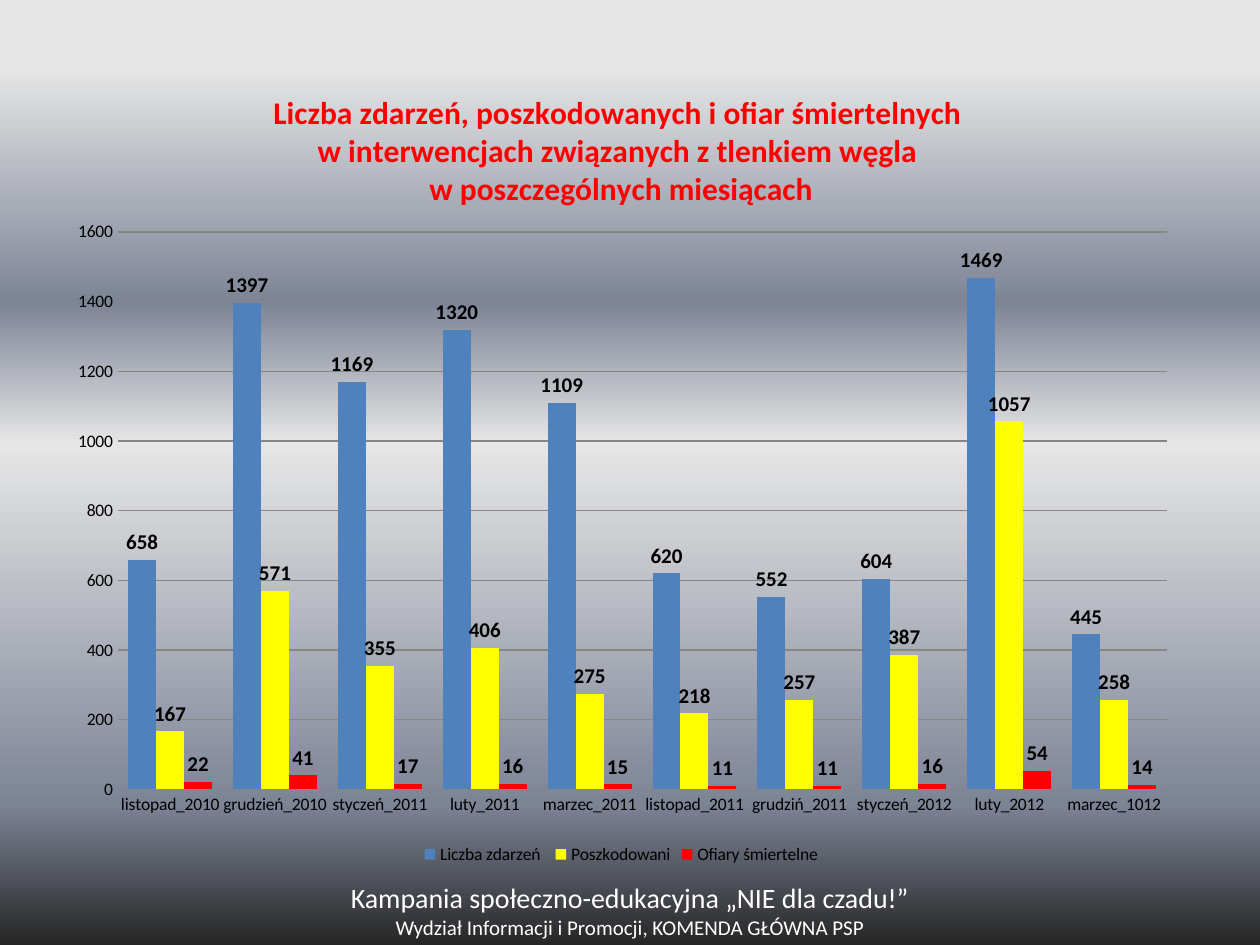
from dataclasses import dataclass

from lxml.etree import SubElement
from pptx import Presentation
from pptx.chart.data import CategoryChartData
from pptx.dml.color import RGBColor
from pptx.enum.chart import (XL_CHART_TYPE, XL_LABEL_POSITION,
                             XL_LEGEND_POSITION, XL_TICK_MARK)
from pptx.enum.text import MSO_ANCHOR, PP_ALIGN
from pptx.oxml import parse_xml
from pptx.oxml.ns import nsdecls, qn
from pptx.util import Inches, Pt


@dataclass(frozen=True)
class Theme:
    font: str = "Calibri"
    text: str = "000000"
    light: str = "FFFFFF"
    title: str = "FF0000"
    grid: str = "868686"
    series: tuple = ("4F81BD", "FFFF00", "FF0000")
    background: tuple = ((7, "E6E6E6"), (32, "7D8496"), (47, "E6E6E6"),
                         (85, "7D8496"), (100, "262626"))
    title_size: int = 18
    campaign_size: int = 16
    body_size: int = 12
    axis_size: int = 10


THEME = Theme()

TITLE = ("Liczba zdarzeń, poszkodowanych i ofiar śmiertelnych ",
         "w interwencjach związanych z tlenkiem węgla ",
         "w poszczególnych miesiącach")
FOOTER = (("Kampania społeczno-edukacyjna „NIE dla czadu!”", THEME.campaign_size),
          ("Wydział Informacji i Promocji, KOMENDA GŁÓWNA PSP", THEME.body_size))
MONTHS = ("listopad_2010", "grudzień_2010", "styczeń_2011", "luty_2011",
          "marzec_2011", "listopad_2011", "grudziń_2011", "styczeń_2012",
          "luty_2012", "marzec_1012")
COUNTS = {
    "Liczba zdarzeń ": (658, 1397, 1169, 1320, 1109, 620, 552, 604, 1469, 445),
    "Poszkodowani": (167, 571, 355, 406, 275, 218, 257, 387, 1057, 258),
    "Ofiary śmiertelne": (22, 41, 17, 16, 15, 11, 11, 16, 54, 14),
}


def apply(obj, **values):
    for name, value in values.items():
        setattr(obj, name, value)


def format_font(font, size, color=THEME.text, bold=False):
    apply(font, name=THEME.font, size=Pt(size), bold=bold)
    font.color.rgb = RGBColor.from_string(color)


def format_line(line, color=THEME.grid):
    line.color.rgb = RGBColor.from_string(color)
    line.width = Pt(0.75)


def fill_paragraph(p, text, size, color, bold=False):
    p.alignment = PP_ALIGN.CENTER
    r = p.add_run()
    r.text = text
    format_font(r.font, size, color, bold)


def paragraphs(tf, count):
    """Return count paragraphs, the first being the one already there."""
    return [tf.paragraphs[0]] + [tf.add_paragraph() for _ in range(count - 1)]


def set_background(s):
    fill = s.background.fill
    fill.gradient()
    fill.gradient_angle = 270
    stops = s._element.find(".//" + qn("a:gsLst"))
    for stop in list(stops):
        stops.remove(stop)
    for percent, color in THEME.background:
        stop = SubElement(stops, qn("a:gs"), pos=str(percent * 1000))
        SubElement(stop, qn("a:srgbClr"), val=color)


def set_layout(element, index, inner=False, **fractions):
    """Place a chart part by fractions of the chart's size."""
    old = element.find(qn("c:layout"))
    if old is not None:
        element.remove(old)
    layout = parse_xml(f"<c:layout {nsdecls('c')}><c:manualLayout/></c:layout>")
    manual = layout[0]
    if inner:
        SubElement(manual, qn("c:layoutTarget"), val="inner")
    for side in "xy":
        SubElement(manual, qn(f"c:{side}Mode"), val="edge")
    for side, value in fractions.items():
        SubElement(manual, qn(f"c:{side}"), val=str(value))
    element.insert(index, layout)


def add_chart_title(chart):
    chart.has_title = True
    title = chart.chart_title
    for p, text in zip(paragraphs(title.text_frame, len(TITLE)), TITLE):
        fill_paragraph(p, text, THEME.title_size, THEME.title, True)
    set_layout(title._element, 1, x=0.19, y=0.04)


def format_axes(chart):
    for axis in (chart.category_axis, chart.value_axis):
        apply(axis, major_tick_mark=XL_TICK_MARK.NONE,
              minor_tick_mark=XL_TICK_MARK.NONE)
        format_font(axis.tick_labels.font, THEME.axis_size)
    format_line(chart.category_axis.format.line)
    apply(chart.value_axis, minimum_scale=0, maximum_scale=1600,
          major_unit=200, has_major_gridlines=True)
    chart.value_axis.format.line.fill.background()
    format_line(chart.value_axis.major_gridlines.format.line)


def format_series(series, color):
    series.invert_if_negative = False
    series.format.fill.solid()
    series.format.fill.fore_color.rgb = RGBColor.from_string(color)
    labels = series.data_labels
    apply(labels, show_value=True, position=XL_LABEL_POSITION.OUTSIDE_END)
    format_font(labels.font, THEME.body_size, bold=True)


def add_monthly_chart(s):
    data = CategoryChartData()
    data.categories = MONTHS
    for name, values in COUNTS.items():
        data.add_series(name, values)
    chart = s.shapes.add_chart(
        XL_CHART_TYPE.COLUMN_CLUSTERED, Inches(0.43), Inches(0.44),
        Inches(9), Inches(6.46), data).chart
    format_font(chart.font, THEME.axis_size)
    add_chart_title(chart)
    format_axes(chart)

    # Columns
    plot = chart.plots[0]
    apply(plot, gap_width=75, overlap=0, vary_by_categories=False)
    for series, color in zip(plot.series, THEME.series):
        format_series(series, color)
    plot_area = chart._chartSpace.find(".//" + qn("c:plotArea"))
    set_layout(plot_area, 0, inner=True, x=0.056, y=0.217, w=0.925, h=0.685)

    # Legend
    chart.has_legend = True
    apply(chart.legend, position=XL_LEGEND_POSITION.BOTTOM,
          include_in_layout=False)
    format_font(chart.legend.font, THEME.axis_size)


def add_footer(s):
    tf = s.shapes.add_textbox(Inches(2.01), Inches(7.1),
                              Inches(5.98), Inches(0.4)).text_frame
    apply(tf, word_wrap=True, vertical_anchor=MSO_ANCHOR.MIDDLE,
          margin_top=Inches(0.05), margin_bottom=Inches(0.2))
    for p, (text, size) in zip(paragraphs(tf, len(FOOTER)), FOOTER):
        fill_paragraph(p, text, size, THEME.light)


def main():
    prs = Presentation()
    apply(prs, slide_width=Inches(10), slide_height=Inches(7.5))
    s = prs.slides.add_slide(prs.slide_layouts[6])
    set_background(s)
    add_footer(s)
    add_monthly_chart(s)
    prs.save("out.pptx")


if __name__ == "__main__":
    main()
